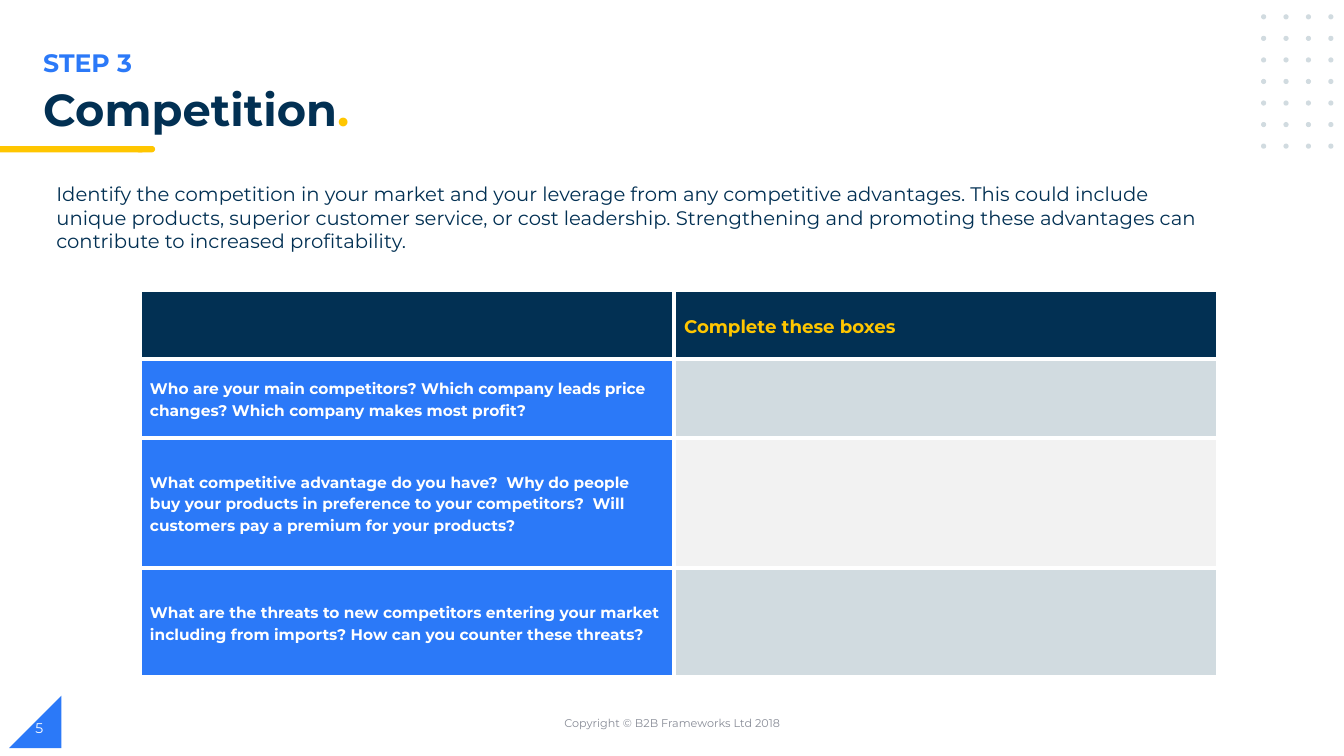
from lxml import etree
from pptx import Presentation
from pptx.dml.color import RGBColor
from pptx.enum import shapes, text
from pptx.oxml import ns
from pptx.util import Cm, Pt

NAVY, BLUE, YELLOW, WHITE = "023053", "2B79F8", "FFC600", "FFFFFF"
MIST, PALE, GREY = "D1DBE0", "F2F2F2", "888C97"
FONT = "Montserrat"
LEFT, CENTER = text.PP_ALIGN.LEFT, text.PP_ALIGN.CENTER
TOP, MIDDLE = text.MSO_ANCHOR.TOP, text.MSO_ANCHOR.MIDDLE

presentation = Presentation()
presentation.slide_width, presentation.slide_height = Cm(33.87), Cm(19.05)
slide = presentation.slides.add_slide(presentation.slide_layouts[6])


def write(content, size, color, box=None, frame=None, bold=False,
          align=LEFT, anchor=TOP, spacing=None):
    """Write into a new text box at box, or into an existing text frame."""
    if box:
        frame = slide.shapes.add_textbox(*map(Cm, box)).text_frame
        frame.vertical_anchor = anchor
    frame.word_wrap = True
    paragraph = frame.paragraphs[0]
    paragraph.alignment = align
    if spacing:
        paragraph.line_spacing = spacing
    run = paragraph.add_run()
    run.text = content
    run.font.name, run.font.size, run.font.bold = FONT, Pt(size), bold
    run.font.color.rgb = RGBColor.from_string(color)
    return paragraph


def add_filled(kind, color, *box):
    shape = slide.shapes.add_shape(kind, *map(Cm, box))
    shape.shadow.inherit = False
    shape.fill.solid()
    shape.fill.fore_color.rgb = RGBColor.from_string(color)
    shape.line.fill.background()
    return shape


# Page corner
corner = add_filled(shapes.MSO_SHAPE.RIGHT_TRIANGLE, BLUE, 0.23, 17.53, 1.32, 1.32)
corner._element.spPr.find(ns.qn("a:xfrm")).set("flipH", "1")

# Title underline with a rounded end
add_filled(shapes.MSO_SHAPE.FLOWCHART_TERMINATOR, YELLOW, 3.42, 3.68, 0.49, 0.16)
add_filled(shapes.MSO_SHAPE.RECTANGLE, YELLOW, 0, 3.68, 3.59, 0.16)

# Dot grid
for row in range(7):
    for column in range(4):
        add_filled(shapes.MSO_SHAPE.OVAL, MIST,
                   31.78 + column * 0.565, 0.36 + row * 0.543, 0.13, 0.13)

# Headings and introduction
write("STEP 3", 18, BLUE, box=(0.84, 1.07, 17, 1.02), bold=True)
title = write("Competition", 32, NAVY, box=(0.84, 2.08, 29.44, 1.42),
              bold=True, spacing=0.9)
full_stop = title.add_run()
full_stop.text = "."
full_stop.font.name, full_stop.font.size, full_stop.font.bold = FONT, Pt(32), True
full_stop.font.color.rgb = RGBColor.from_string(YELLOW)
write("Identify the competition in your market and your leverage from any "
      "competitive advantages. This could include unique products, superior "
      "customer service, or cost leadership. Strengthening and promoting these "
      "advantages can contribute to increased profitability.",
      14, NAVY, box=(1.17, 4.47, 29.64, 2.06))

# Footer
write("Copyright © B2B Frameworks Ltd 2018", 8, GREY,
      box=(11.23, 17.7, 11.43, 1.02), align=CENTER, anchor=MIDDLE)
write("5", 10, WHITE, box=(0.64, 17.83, 7.62, 1.02), anchor=MIDDLE)

# Question table: content, size, text colour and fill of both cells in each row
questions = [
    "Who are your main competitors? Which company leads price changes? "
    "Which company makes most profit?",
    "What competitive advantage do you have?  Why do people buy your products "
    "in preference to your competitors?  Will customers pay a premium for your "
    "products?",
    "What are the threats to new competitors entering your market including "
    "from imports? How can you counter these threats?",
]
rows = [[("", 13, YELLOW, NAVY), ("Complete these boxes", 13, YELLOW, NAVY)]]
for question, answer_fill in zip(questions, (MIST, PALE, MIST)):
    rows.append([(question, 11, WHITE, BLUE), ("", 11, NAVY, answer_fill)])
widths, heights = (13.46, 13.69), (1.73, 1.98, 3.28, 2.74)

table = slide.shapes.add_table(len(rows), 2, Cm(3.53), Cm(7.32),
                               Cm(sum(widths)), Cm(sum(heights))).table
for column, width in zip(table.columns, widths):
    column.width = Cm(width)
for row, height, cells in zip(table.rows, heights, rows):
    row.height = Cm(height)
    for cell, (content, size, color, fill) in zip(row.cells, cells):
        cell.vertical_anchor = MIDDLE
        cell.margin_left = cell.margin_right = Cm(0.25)
        cell.margin_top = cell.margin_bottom = 0
        if content:
            write(content, size, color, frame=cell.text_frame, bold=True, spacing=1.15)
        # Borders come before the fill in the cell properties
        properties = cell._tc.get_or_add_tcPr()
        for side in ("lnL", "lnR", "lnT", "lnB"):
            border = etree.SubElement(properties, ns.qn(f"a:{side}"), w=str(Pt(3)))
            solid = etree.SubElement(border, ns.qn("a:solidFill"))
            etree.SubElement(solid, ns.qn("a:srgbClr"), val=WHITE)
        cell.fill.solid()
        cell.fill.fore_color.rgb = RGBColor.from_string(fill)

presentation.save("out.pptx")
